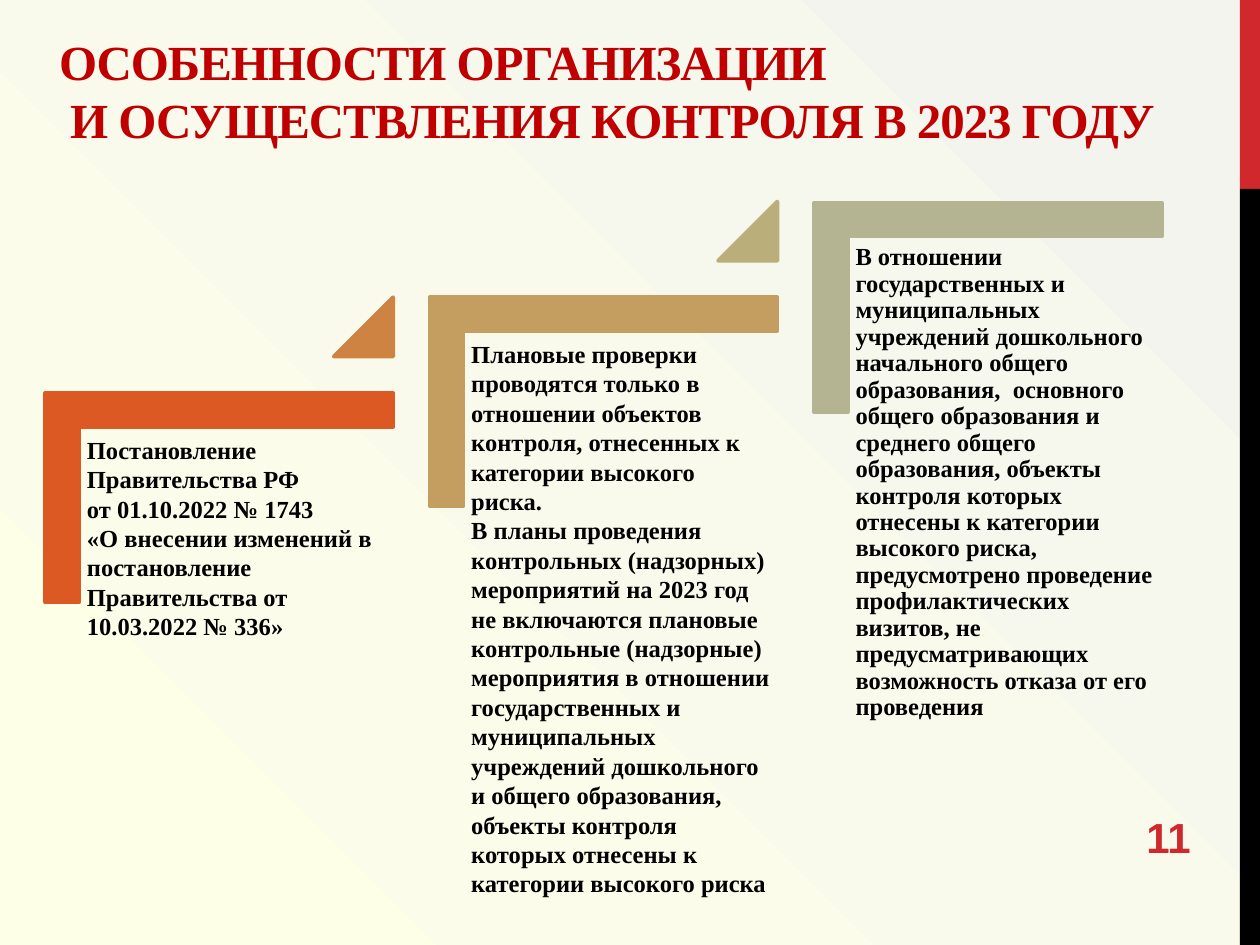
from dataclasses import dataclass

from lxml import etree
from pptx import Presentation
from pptx.dml.color import RGBColor
from pptx.enum.shapes import MSO_SHAPE
from pptx.enum.text import MSO_ANCHOR
from pptx.oxml.ns import qn
from pptx.util import Pt

PX = 9144  # one px is a hundredth of an inch
BLANK = 6
RECTANGLE = MSO_SHAPE.RECTANGLE
CORNER = MSO_SHAPE.CORNER
TRIANGLE = MSO_SHAPE.ISOSCELES_TRIANGLE
TOP, MIDDLE, BOTTOM = MSO_ANCHOR.TOP, MSO_ANCHOR.MIDDLE, MSO_ANCHOR.BOTTOM


@dataclass(frozen=True)
class Theme:
    cream: str = "FDFFE7"
    mist: str = "F4F4EF"
    red: str = "D1282E"
    heading: str = "C00000"
    black: str = "000000"
    corners: tuple = ("DC5924", "C39E60", "B4B392")
    triangles: tuple = ("CE8343", "BAAE7A")
    serif: str = "Times New Roman"
    sans: str = "Arial"
    title_size: int = 28
    number_size: int = 24
    body_size: int = 14
    outline: float = 2.25


class SlideBuilder:
    def __init__(self, page, theme):
        self.page = page
        self.theme = theme

    def background(self):
        fill = self.page.background.fill
        fill.gradient()
        colors = (self.theme.cream, self.theme.mist)
        for stop, position, color in zip(fill.gradient_stops, (0, 0.99), colors):
            stop.position = position
            stop.color.rgb = RGBColor.from_string(color)
        # Radiate from the lower left corner
        linear = next(self.page.background._cSld.iter(qn("a:lin")))
        radial = etree.Element(qn("a:path"), {"path": "circle"})
        etree.SubElement(radial, qn("a:fillToRect"), {"t": "100000", "r": "100000"})
        linear.getparent().replace(linear, radial)

    def shape(self, kind, area, color, adjust=(), rotation=0, outlined=True):
        shape = self.page.shapes.add_shape(kind, *(value * PX for value in area))
        shape.shadow.inherit = False
        shape.rotation = rotation
        for index, value in enumerate(adjust):
            shape.adjustments[index] = value
        shape.fill.solid()
        shape.fill.fore_color.rgb = RGBColor.from_string(color)
        if outlined:
            shape.line.color.rgb = RGBColor.from_string(color)
            shape.line.width = Pt(self.theme.outline)
        else:
            shape.line.fill.background()

    def text(self, area, paragraphs, size, color, font, anchor=TOP,
             inset=None, line_spacing=None, tracking=None):
        box = self.page.shapes.add_textbox(*(value * PX for value in area))
        frame = box.text_frame
        layout = {"word_wrap": True, "vertical_anchor": anchor}
        if inset is not None:
            sides = ("left", "top", "right", "bottom")
            layout.update({f"margin_{side}": inset * PX for side in sides})
        for name, value in layout.items():
            setattr(frame, name, value)
        style = {"name": font, "size": Pt(size), "bold": True}
        for index, words in enumerate(paragraphs):
            para = frame.add_paragraph() if index else frame.paragraphs[0]
            para.text = words
            para.line_spacing = line_spacing
            for span in para.runs:
                for name, value in style.items():
                    setattr(span.font, name, value)
                span.font.color.rgb = RGBColor.from_string(color)
                if tracking is not None:
                    span._r.get_or_add_rPr().set("spc", str(tracking))

    def step(self, left, top, color, paragraphs, line_spacing):
        theme = self.theme
        self.shape(CORNER, (left + 28, top, 166, 276), color, (0.161, 0.161), 90)
        self.text((left, top + 82, 249, 218), paragraphs, theme.body_size,
                  theme.black, theme.serif, inset=6, line_spacing=line_spacing)


STEP_PITCH = 305
STEPS = (  # top, line spacing, paragraphs
    (257, None, (
        "Постановление Правительства РФ",
        "от 01.10.2022 № 1743",
        "«О внесении изменений в постановление Правительства от "
        "10.03.2022 № 336»")),
    (181, None, (
        "Плановые проверки проводятся только в отношении объектов контроля, "
        "отнесенных к категории высокого риска.",
        "В планы проведения контрольных (надзорных) мероприятий на 2023 год "
        "не включаются плановые контрольные (надзорные) мероприятия в отношении "
        "государственных и муниципальных учреждений дошкольного и общего "
        "образования, объекты контроля которых отнесены к категории высокого риска")),
    (106, 0.9, (
        "В отношении государственных и муниципальных учреждений дошкольного "
        "начального общего образования,  основного общего образования и среднего "
        "общего образования, объекты контроля которых отнесены к категории "
        "высокого риска, предусмотрено проведение профилактических визитов, "
        "не предусматривающих возможность отказа от его проведения",)),
)


def main():
    deck = Presentation()
    deck.slide_width, deck.slide_height = 1000 * PX, 750 * PX
    theme = Theme()
    page = deck.slides.add_slide(deck.slide_layouts[BLANK])
    builder = SlideBuilder(page, theme)

    # Background and side band
    builder.background()
    builder.shape(RECTANGLE, (984, 0, 16, 150), theme.red, outlined=False)
    builder.shape(RECTANGLE, (984, 150, 16, 600), theme.black, outlined=False)

    # Title
    builder.text((37, 3, 938, 120),
                 ["ОСОБЕННОСТИ ОРГАНИЗАЦИИ\n И ОСУЩЕСТВЛЕНИЯ КОНТРОЛЯ В 2023 ГОДУ"],
                 theme.title_size, theme.heading, theme.serif, BOTTOM, tracking=-60)

    # Rising steps
    for index, (top, line_spacing, paragraphs) in enumerate(STEPS):
        left = 63 + index * STEP_PITCH
        builder.step(left, top, theme.corners[index], paragraphs, line_spacing)
        if index < len(theme.triangles):
            builder.shape(TRIANGLE, (left + 202, top - 21, 47, 47),
                          theme.triangles[index], (1,))

    # Page number
    builder.text((900, 644, 144, 40), ["11"], theme.number_size, theme.red,
                 theme.sans, MIDDLE)

    deck.save("out.pptx")


if __name__ == "__main__":
    main()
